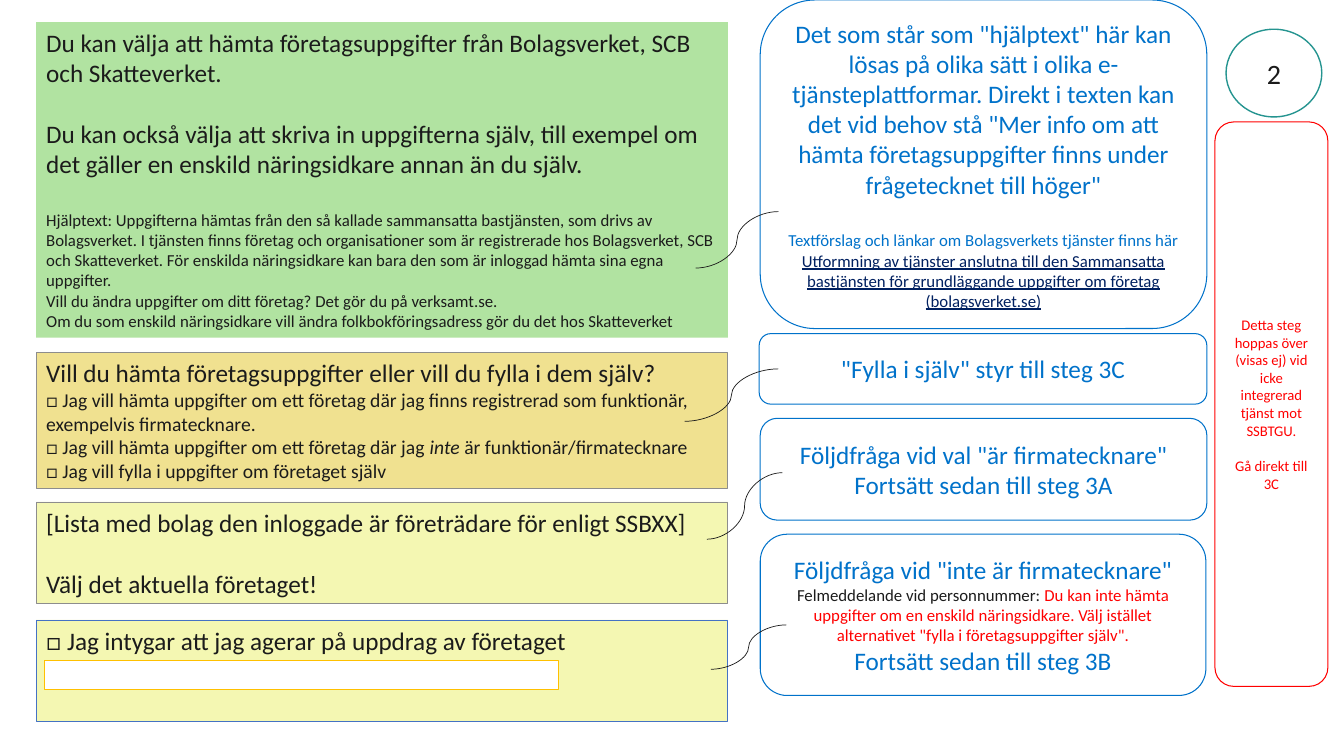
from lxml import etree
from pptx import Presentation
from pptx.dml.color import RGBColor
from pptx.enum.shapes import MSO_CONNECTOR, MSO_SHAPE
from pptx.enum.text import MSO_ANCHOR, PP_ALIGN
from pptx.oxml.ns import qn
from pptx.util import Inches, Pt

RECT, ROUND, OVAL = MSO_SHAPE.RECTANGLE, MSO_SHAPE.ROUNDED_RECTANGLE, MSO_SHAPE.OVAL
CURVE = MSO_CONNECTOR.CURVE
TOP, MIDDLE = MSO_ANCHOR.TOP, MSO_ANCHOR.MIDDLE
LEFT, CENTER = PP_ALIGN.LEFT, PP_ALIGN.CENTER

INK = RGBColor(0x1B, 0x1B, 0x1B)
BLUE = RGBColor(0x00, 0x72, 0xCA)
NAVY = RGBColor(0x00, 0x20, 0x60)
RED = RGBColor(0xFF, 0x00, 0x00)
WHITE = RGBColor(0xFF, 0xFF, 0xFF)
GREEN = RGBColor(0xB1, 0xE3, 0xA1)
SAND = RGBColor(0xF0, 0xE1, 0x90)
YELLOW = RGBColor(0xF4, 0xF7, 0xB2)
GREY = RGBColor(0x8D, 0x8D, 0x8D)
TEAL = RGBColor(0x25, 0x94, 0x90)
FRAME_BLUE = RGBColor(0x44, 0x72, 0xC4)
AMBER = RGBColor(0xFF, 0xC0, 0x00)

prs = Presentation()
prs.slide_width, prs.slide_height = Inches(13.33), Inches(7.5)
s = prs.slides.add_slide(prs.slide_layouts[6])


def add_box(kind, at, fill, line, width, paragraphs=()):
    sp = s.shapes.add_shape(kind, *[Inches(v) for v in at])
    sp.shadow.inherit = False
    if fill is None:
        sp.fill.background()
    else:
        sp.fill.solid()
        sp.fill.fore_color.rgb = fill
    if line is None:
        sp.line.fill.background()
    else:
        sp.line.color.rgb = line
        sp.line.width = Pt(width)
    tf = sp.text_frame
    tf.word_wrap = True
    tf.vertical_anchor = TOP if kind == RECT else MIDDLE
    for i, (gap, runs) in enumerate(paragraphs):
        p = tf.add_paragraph() if i else tf.paragraphs[0]
        p.alignment = LEFT if kind == RECT else CENTER
        p.space_before = Pt(gap)
        for text, size, color, *style in runs:
            r = p.add_run()
            r.text = text
            r.font.name = "Calibri"
            r.font.size = Pt(size)
            r.font.color.rgb = color
            if "italic" in style:
                r.font.italic = True
            if "underline" in style:
                r.font.underline = True


add_box(RECT, (0.36, 3.5, 6.85, 1.35), SAND, GREY, 0.5, [
    (0, [("Vill du hämta företagsuppgifter eller vill du fylla i dem själv?", 18, INK)]),
    (0, [("□ Jag vill hämta uppgifter om ett företag där jag finns registrerad som "
          "funktionär, exempelvis firmatecknare.", 14, INK)]),
    (0, [("□ Jag vill hämta uppgifter om ett företag där jag ", 14, INK),
         ("inte", 14, INK, "italic"),
         (" är funktionär/firmatecknare", 14, INK)]),
    (0, [("□ Jag vill fylla i uppgifter om företaget själv", 14, INK)]),
])
add_box(OVAL, (12.16, 0.29, 0.95, 0.87), WHITE, TEAL, 1, [(0, [("2", 20, INK)])])
add_box(RECT, (0.36, 0.22, 6.86, 3.13), GREEN, None, 0, [
    (0, [("Du kan välja att hämta företagsuppgifter från Bolagsverket, SCB och "
          "Skatteverket.", 18, INK)]),
    (22, [("Du kan också välja att skriva in uppgifterna själv, till exempel om det "
           "gäller en enskild näringsidkare annan än du själv.", 18, INK)]),
    (22, [("Hjälptext: Uppgifterna hämtas från den så kallade sammansatta bastjänsten, "
           "som drivs av Bolagsverket. I tjänsten finns företag och organisationer som är "
           "registrerade hos Bolagsverket, SCB och Skatteverket. För enskilda "
           "näringsidkare kan bara den som är inloggad hämta sina egna uppgifter.", 12, INK)]),
    (0, [("Vill du ändra uppgifter om ditt företag? Det gör du på verksamt.se.", 12, INK)]),
    (0, [("Om du som enskild näringsidkare vill ändra folkbokföringsadress gör du det "
          "hos Skatteverket", 12, INK)]),
])
add_box(RECT, (0.36, 4.98, 6.86, 1.01), YELLOW, GREY, 0.5, [
    (0, [("[Lista med bolag den inloggade är företrädare för enligt SSBXX]", 18, INK)]),
    (22, [("Välj det aktuella företaget!", 18, INK)]),
])
add_box(RECT, (0.36, 6.15, 6.86, 1.01), YELLOW, FRAME_BLUE, 0.5, [
    (0, [("□ Jag intygar att jag agerar på uppdrag av företaget", 18, INK)]),
])
add_box(RECT, (0.44, 6.55, 5.1, 0.29), WHITE, AMBER, 0.75)

add_box(ROUND, (7.54, 0, 4.43, 3.26), None, BLUE, 0.75, [
    (0, [("Det som står som \"hjälptext\" här kan lösas på olika sätt i olika "
          "e-tjänsteplattformar. Direkt i texten kan det vid behov stå \"Mer info om att "
          "hämta företagsuppgifter finns under frågetecknet till höger\"", 18, BLUE)]),
    (22, [("Textförslag och länkar om Bolagsverkets tjänster finns här ", 12, BLUE),
          ("Utformning av tjänster anslutna till den Sammansatta bastjänsten för "
           "grundläggande uppgifter om företag (bolagsverket.se)", 12, NAVY, "underline")]),
])
add_box(ROUND, (7.53, 3.31, 4.44, 0.7), None, BLUE, 0.75, [
    (0, [("\"Fylla i själv\" styr till steg 3C", 18, BLUE)]),
])
add_box(ROUND, (7.54, 4.15, 4.43, 1.01), None, BLUE, 0.75, [
    (0, [("Följdfråga vid val \"är firmatecknare\"", 18, BLUE)]),
    (0, [("Fortsätt sedan till steg 3A", 18, BLUE)]),
])
add_box(ROUND, (7.54, 5.3, 4.42, 1.6), None, BLUE, 0.75, [
    (0, [("Följdfråga vid \"inte är firmatecknare\"", 18, BLUE)]),
    (0, [("Felmeddelande vid personnummer: ", 12, INK),
         ("Du kan inte hämta uppgifter om en enskild näringsidkare. Välj "
          "istället alternativet \"fylla i företagsuppgifter själv\".", 12, RED)]),
    (0, [("Fortsätt sedan till steg 3B", 18, BLUE)]),
])
add_box(ROUND, (12.05, 1.21, 1.12, 5.6), None, RED, 0.75, [
    (0, [("Detta steg hoppas över (visas ej) vid icke integrerad tjänst mot SSBTGU.",
          10.5, RED)]),
    (13, [("Gå direkt till 3C", 10.5, RED)]),
])

for ends in [
    (6.9, 2.66, 7.72, 2.1),
    (6.79, 4.18, 7.72, 3.66),
    (7.01, 5.35, 7.76, 4.69),
    (7.05, 6.64, 7.8, 6.2),
]:
    link = s.shapes.add_connector(CURVE, *[Inches(v) for v in ends])
    link.line.color.rgb = INK
    link.line.width = Pt(0.5)
    etree.SubElement(link._element.spPr, qn("a:effectLst"))

prs.save("out.pptx")
